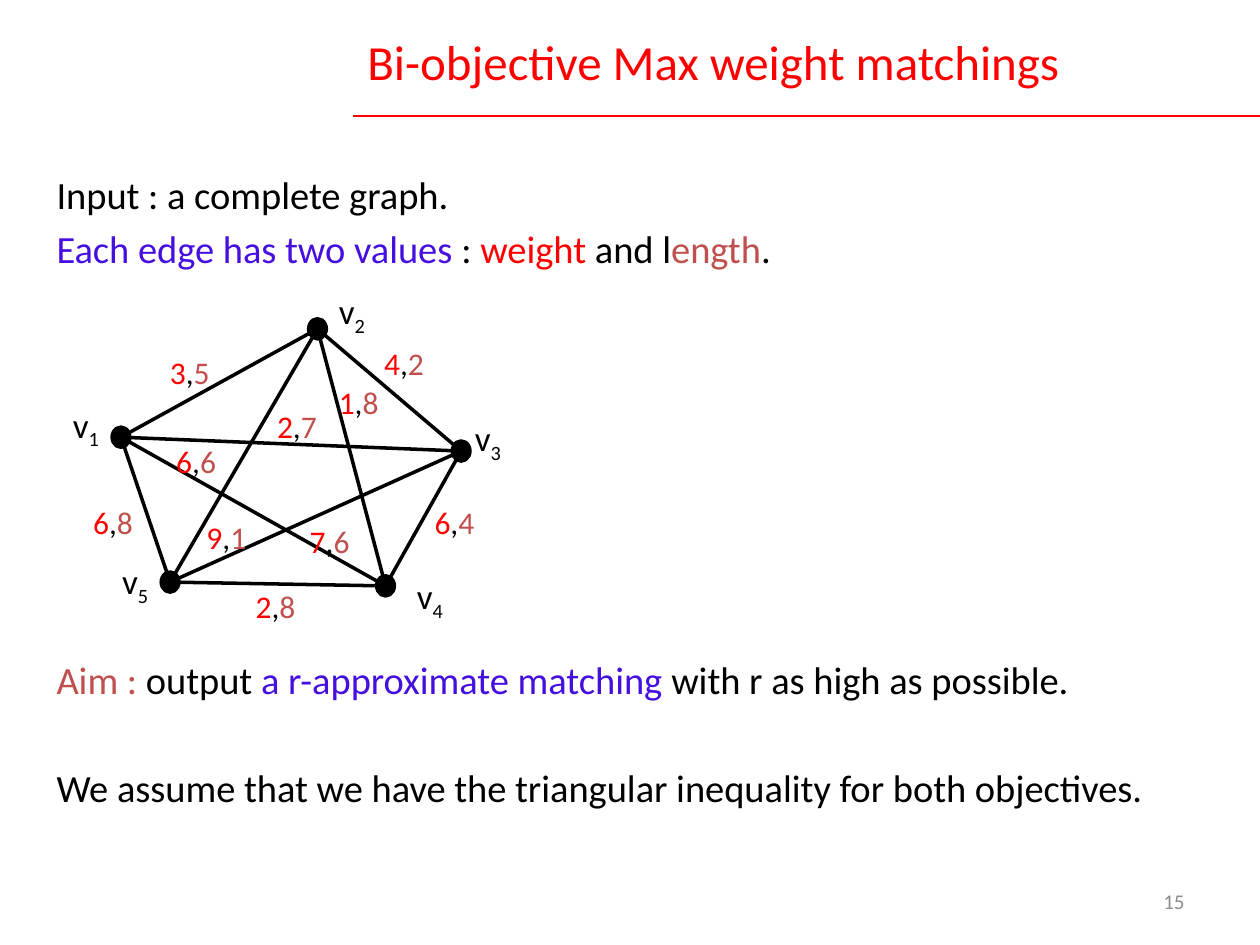
from lxml import etree
from pptx import Presentation
from pptx.dml.color import RGBColor
from pptx.enum.shapes import MSO_CONNECTOR, MSO_SHAPE
from pptx.enum.text import MSO_ANCHOR, PP_ALIGN
from pptx.oxml.ns import qn
from pptx.util import Inches, Pt

LINE = MSO_CONNECTOR.STRAIGHT
DOT = MSO_SHAPE.FLOWCHART_CONNECTOR
LEFT, MID, RIGHT = PP_ALIGN.LEFT, PP_ALIGN.CENTER, PP_ALIGN.RIGHT
TOP, CENTER = MSO_ANCHOR.TOP, MSO_ANCHOR.MIDDLE

FONT = "Calibri"
COLORS = {"black": "000000", "red": "FF0000", "brick": "C0504D",
          "blue": "450FDF", "gray": "8C8C8C"}

TITLE = [("Bi-objective Max weight matchings", "red")]
NUMBER = [("15", "gray")]
# Space before in points, then the runs
BODY = [
    (4.4, [("Input : a complete graph.", "black")]),
    (4.4, [("Each edge has two values ", "blue"), (": ", "black"),
           ("weight", "red"), (" and l", "black"), ("ength", "brick"),
           (".", "black")]),
    (220, [("Aim :", "brick"), (" output ", "black"),
           ("a r-approximate matching ", "blue"),
           ("with r as high as possible.", "black")]),
    (35.3, [("We assume that we have the triangular inequality "
             "for both objectives.", "black")]),
]
# Node: centre, then left and top of its name
NODES = {
    1: ((0.96, 3.47), (0.48, 3.15)),
    2: ((2.52, 2.61), (2.59, 2.25)),
    3: ((3.66, 3.58), (3.67, 3.26)),
    4: ((3.06, 4.65), (3.21, 4.51)),
    5: ((1.35, 4.62), (0.87, 4.39)),
}
# Edge: two nodes, weight, length, then left and top of the label
EDGES = [
    (1, 2, 3, 5, (1.25, 2.75)),
    (1, 3, 2, 7, (2.1, 3.18)),
    (1, 4, 6, 6, (1.3, 3.46)),
    (1, 5, 6, 8, (0.64, 3.94)),
    (2, 3, 4, 2, (2.95, 2.68)),
    (2, 4, 1, 8, (2.59, 2.99)),
    (2, 5, 9, 1, (1.54, 4.06)),
    (3, 4, 6, 4, (3.35, 3.94)),
    (3, 5, 7, 6, (2.36, 4.09)),
    (4, 5, 2, 8, (1.93, 4.61)),
]
DOT_W, DOT_H = 0.14, 0.16


def rgb(name):
    return RGBColor.from_string(COLORS[name])


def add_text(slide, box, paras, size, align=LEFT, anchor=TOP, wrap=True):
    """Add a text box; paras holds (space before, runs) pairs."""
    frame = slide.shapes.add_textbox(*map(Inches, box)).text_frame
    frame.word_wrap = wrap
    frame.vertical_anchor = anchor
    for i, (space, runs) in enumerate(paras):
        para = frame.add_paragraph() if i else frame.paragraphs[0]
        para.alignment = align
        para.space_before = Pt(space)
        for text, color in runs:
            run = para.add_run()
            run.text = text
            run.font.name = FONT
            run.font.size = Pt(size)
            run.font.color.rgb = rgb(color)
    return frame


def add_line(slide, start, end, color, width):
    line = slide.shapes.add_connector(LINE, *map(Inches, (*start, *end)))
    line.line.color.rgb = rgb(color)
    line.line.width = Pt(width)
    etree.SubElement(line._element.spPr, qn("a:effectLst"))


def add_node(slide, key, center, place):
    x, y = center
    box = (x - DOT_W / 2, y - DOT_H / 2, DOT_W, DOT_H)
    dot = slide.shapes.add_shape(DOT, *map(Inches, box))
    dot.shadow.inherit = False
    dot.fill.solid()
    dot.fill.fore_color.rgb = rgb("black")
    dot.line.color.rgb = rgb("black")
    dot.line.width = Pt(2)
    runs = [("v", "black"), (str(key), "black")]
    frame = add_text(slide, (*place, 0.69, 0.44), [(0, runs)], 20)
    sub = frame.paragraphs[0].runs[1]
    sub.font._element.set("baseline", "-25000")


def main():
    deck = Presentation()
    deck.slide_width, deck.slide_height = Inches(10), Inches(7.5)
    slide = deck.slides.add_slide(deck.slide_layouts[6])

    add_text(slide, (1.82, -0.03, 7.68, 1.02), [(0, TITLE)], 28, MID, CENTER)
    add_line(slide, (2.8, 0.92), (10, 0.92), "red", 1.25)
    add_text(slide, (0.35, 1.31, 9.29, 6.03), BODY, 22)
    add_text(slide, (7.17, 6.95, 2.33, 0.4), [(0, NUMBER)], 12, RIGHT, CENTER)

    for a, b, *_ in EDGES:
        add_line(slide, NODES[a][0], NODES[b][0], "black", 2)
    for key, (center, place) in NODES.items():
        add_node(slide, key, center, place)
    for _, _, weight, length, place in EDGES:
        runs = [(str(weight), "red"), (",", "black"), (str(length), "brick")]
        add_text(slide, (*place, 0.52, 0.4), [(0, runs)], 18, wrap=False)

    deck.save("out.pptx")


if __name__ == "__main__":
    main()
